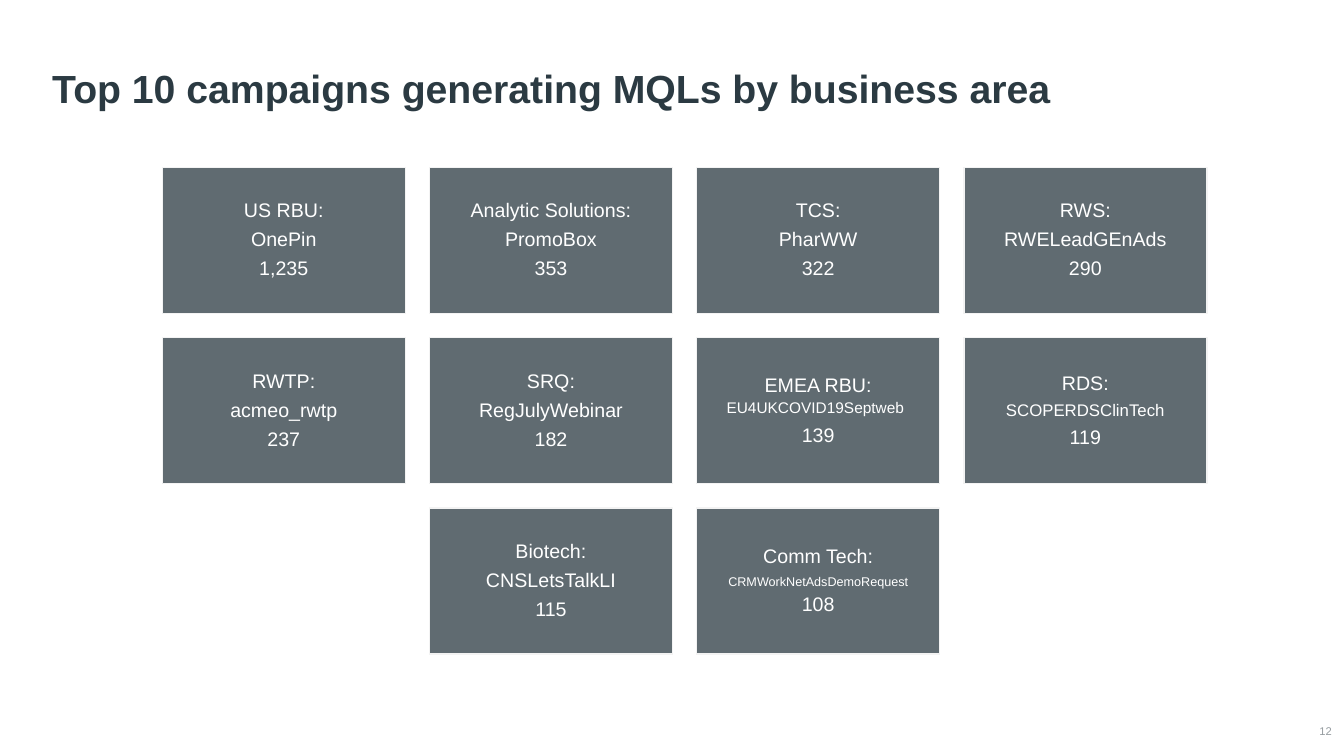
from dataclasses import dataclass

from pptx import Presentation
from pptx.dml.color import RGBColor
from pptx.enum.shapes import MSO_SHAPE
from pptx.enum.text import MSO_ANCHOR, PP_ALIGN
from pptx.util import Pt

EMU_PER_PX = 9144  # 100 px to the inch


@dataclass(frozen=True)
class Theme:
    font: str = "Arial"
    title: str = "2B3A42"
    page_number: str = "959CA0"
    card: str = "606B71"
    card_line: str = "F3F3F3"
    card_text: str = "FFFFFF"
    title_size: int = 28
    body_size: int = 14
    page_number_size: int = 8


THEME = Theme()
COLUMNS = 4
CARD_WIDTH, CARD_HEIGHT, CARD_GAP = 241, 145, 24

# Each card: area, campaign, campaign type size, leads
CAMPAIGNS = [
    ("US RBU:", "OnePin", 14, "1,235"),
    ("Analytic Solutions:", "PromoBox", 14, "353"),
    ("TCS:", "PharWW", 14, "322"),
    ("RWS:", "RWELeadGEnAds", 14, "290"),
    ("RWTP:", "acmeo_rwtp", 14, "237"),
    ("SRQ:", "RegJulyWebinar", 14, "182"),
    ("EMEA RBU:", "EU4UKCOVID19Septweb", 11, "139"),
    ("RDS:", "SCOPERDSClinTech", 12, "119"),
    ("Biotech:", "CNSLetsTalkLI", 14, "115"),
    ("Comm Tech:", "CRMWorkNetAdsDemoRequest", 9, "108"),
]
WRAPPED_AREAS = {"EMEA RBU:"}  # area and campaign share one paragraph


def px(*lengths):
    return [length * EMU_PER_PX for length in lengths]


def add_run(paragraph, text, size, color, bold=False):
    run = paragraph.add_run()
    run.text = text
    run.font.name = THEME.font
    run.font.size = Pt(size)
    run.font.bold = bold
    run.font.color.rgb = RGBColor.from_string(color)


def set_margins(text_frame, horizontal, vertical):
    text_frame.margin_left = text_frame.margin_right = horizontal * EMU_PER_PX
    text_frame.margin_top = text_frame.margin_bottom = vertical * EMU_PER_PX


def add_title(slide, box, text):
    text_frame = slide.shapes.add_textbox(*px(*box)).text_frame
    text_frame.word_wrap = True
    text_frame.vertical_anchor = MSO_ANCHOR.BOTTOM
    set_margins(text_frame, 10, 5)
    paragraph = text_frame.paragraphs[0]
    paragraph.line_spacing = 0.9
    add_run(paragraph, text, THEME.title_size, THEME.title, bold=True)


def add_page_number(slide, box, number):
    text_frame = slide.shapes.add_textbox(*px(*box)).text_frame
    text_frame.word_wrap = True
    text_frame.vertical_anchor = MSO_ANCHOR.MIDDLE
    set_margins(text_frame, 0, 0)
    paragraph = text_frame.paragraphs[0]
    paragraph.alignment = PP_ALIGN.RIGHT
    add_run(paragraph, number, THEME.page_number_size, THEME.page_number)


def card_paragraphs(area, campaign, campaign_size, leads):
    """Return the card's paragraphs, each a list of (text, size) runs."""
    size = THEME.body_size
    if area in WRAPPED_AREAS:
        return [[(area + " ", size), (campaign, campaign_size), (" ", size)],
                [(leads, size)]]
    return [[(area, size)], [(campaign, campaign_size)], [(leads, size)]]


def add_card(slide, box, campaign):
    card = slide.shapes.add_shape(MSO_SHAPE.RECTANGLE, *px(*box))
    card.shadow.inherit = False
    card.fill.solid()
    card.fill.fore_color.rgb = RGBColor.from_string(THEME.card)
    card.line.color.rgb = RGBColor.from_string(THEME.card_line)
    card.line.width = Pt(1)
    text_frame = card.text_frame
    text_frame.word_wrap = True
    text_frame.vertical_anchor = MSO_ANCHOR.MIDDLE
    set_margins(text_frame, 6, 6)
    for index, runs in enumerate(card_paragraphs(*campaign)):
        paragraph = text_frame.add_paragraph() if index else text_frame.paragraphs[0]
        paragraph.alignment = PP_ALIGN.CENTER
        paragraph.line_spacing = 0.9
        paragraph.space_after = Pt(round(0.4 * max(size for _, size in runs), 1))
        for text, size in runs:
            add_run(paragraph, text, size, THEME.card_text)


def add_card_grid(slide, left, top, campaigns):
    """Fill rows from the left and centre a short last row."""
    for row, start in enumerate(range(0, len(campaigns), COLUMNS)):
        row_campaigns = campaigns[start:start + COLUMNS]
        pitch = CARD_WIDTH + CARD_GAP
        row_left = left + (COLUMNS - len(row_campaigns)) * pitch // 2
        row_top = top + row * (CARD_HEIGHT + CARD_GAP)
        for column, campaign in enumerate(row_campaigns):
            box = (row_left + column * pitch, row_top, CARD_WIDTH, CARD_HEIGHT)
            add_card(slide, box, campaign)


def main():
    presentation = Presentation()
    presentation.slide_width, presentation.slide_height = px(1333, 750)
    slide = presentation.slides.add_slide(presentation.slide_layouts[6])
    add_page_number(slide, (1282, 716, 39, 19), "12")
    add_title(slide, (42, 32, 1240, 84),
              "Top 10 campaigns generating MQLs by business area")
    add_card_grid(slide, 161, 166, CAMPAIGNS)
    presentation.save("out.pptx")


if __name__ == "__main__":
    main()
